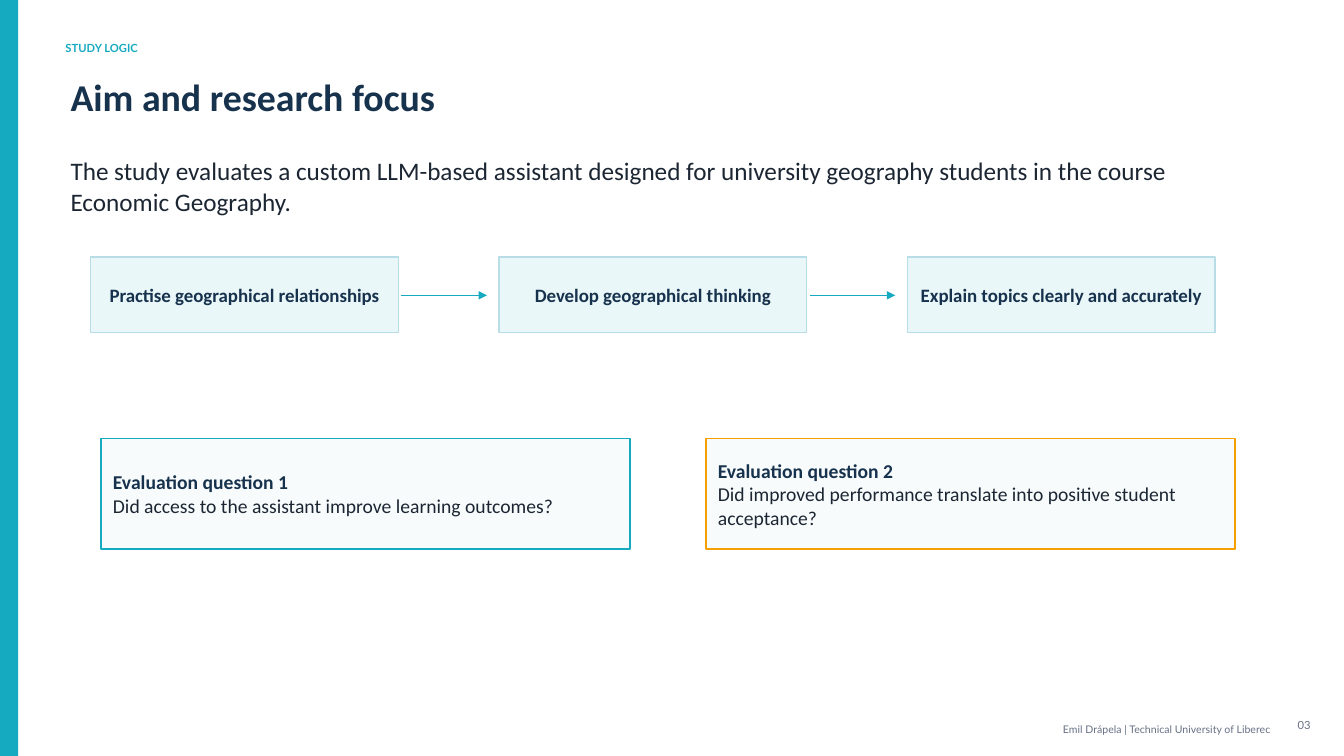
import pptx
import pptx.util
import pptx.dml.color
import pptx.enum.shapes
import pptx.enum.text
import pptx.oxml.ns
import lxml.etree

PX = 9144
HUES = {
    "teal": "15AABF", "navy": "17324D", "ink": "1C2633", "grey": "667085",
    "pale": "EAF7F9", "edge": "B9DDE6", "mist": "F7FBFC", "amber": "F59F00",
    "white": "FFFFFF",
}
ALIGN = pptx.enum.text.PP_ALIGN
STEPS = [
    "Practise geographical relationships",
    "Develop geographical thinking",
    "Explain topics clearly and accurately",
]
ASKS = [
    ("Evaluation question 1",
     "Did access to the assistant improve learning outcomes?", "teal"),
    ("Evaluation question 2",
     "Did improved performance translate into positive student acceptance?", "amber"),
]


def emu(*sizes):
    """Turn px lengths into EMU."""
    return [pptx.util.Emu(size * PX) for size in sizes]


def hue(name):
    """Look up a colour by name."""
    return pptx.dml.color.RGBColor.from_string(HUES[name])


def write(shape, lines, align=ALIGN.LEFT, inset=0):
    """Fill a shape with lines of (text, size, colour, bold, font)."""
    frame = shape.text_frame
    frame.word_wrap = True
    frame.auto_size = pptx.enum.text.MSO_AUTO_SIZE.NONE
    frame.vertical_anchor = pptx.enum.text.MSO_ANCHOR.MIDDLE
    frame.margin_left = inset * PX
    frame.margin_top = frame.margin_right = frame.margin_bottom = 0
    frame.text = "\n".join(line[0] for line in lines)
    for para, (_, size, color, bold, face) in zip(frame.paragraphs, lines):
        para.alignment = align
        para.font.size = pptx.util.Pt(size)
        para.font.bold = bold
        para.font.name = face
        para.font.color.rgb = hue(color)


def label(slide, box, line, align=ALIGN.LEFT):
    """Add a text box with one line of text."""
    write(slide.shapes.add_textbox(*emu(*box)), [line], align)


def panel(slide, box, fill, edge=None, width=1):
    """Add a flat rectangle, outlined if an edge colour is given."""
    kind = pptx.enum.shapes.MSO_SHAPE.RECTANGLE
    shape = slide.shapes.add_shape(kind, *emu(*box))
    shape.shadow.inherit = False
    shape.fill.solid()
    shape.fill.fore_color.rgb = hue(fill)
    if edge:
        shape.line.color.rgb = hue(edge)
        shape.line.width = pptx.util.Pt(width)
    else:
        shape.line.fill.background()
    return shape


def arrow(slide, left, right, y):
    """Draw a level arrow pointing right."""
    kind = pptx.enum.shapes.MSO_CONNECTOR.STRAIGHT
    line = slide.shapes.add_connector(kind, *emu(left, y, right, y))
    line.line.color.rgb = hue("teal")
    line.line.width = pptx.util.Pt(1.2)
    qn = pptx.oxml.ns.qn
    lxml.etree.SubElement(line.line._get_or_add_ln(), qn("a:tailEnd"), type="triangle")
    lxml.etree.SubElement(line._element.spPr, qn("a:effectLst"))


def header(slide, box):
    """Place the section label, the title and the lead text."""
    x, y, w, h = box
    label(slide, (x - 5, y, 280, 25), ("STUDY LOGIC", 8, "teal", True, "Lato"))
    title = slide.shapes.title
    title.left, title.top, title.width, title.height = emu(x, y + 33, 865, 55)
    write(title, [("Aim and research focus", 27, "navy", True, "Calibri")])
    lead = ("The study evaluates a custom LLM-based assistant designed for "
            "university geography students in the course Economic Geography.")
    label(slide, (x, y + h - 85, w, 85), (lead, 18, "ink", False, "Calibri"))


def flow(slide, box):
    """Spread the steps over the box and join them with arrows."""
    x, y, w, h = box
    wide = 305
    pitch = (w - wide) // (len(STEPS) - 1)
    for i, step in enumerate(STEPS):
        left = x + i * pitch
        card = panel(slide, (left, y, wide, h), "pale", "edge")
        write(card, [(step, 13.5, "navy", True, "Calibri")], ALIGN.CENTER)
        if i:
            arrow(slide, left - pitch + wide + 3, left - 12, y + (h + 1) // 2)


def asks(slide, box):
    """Set the evaluation questions side by side in the box."""
    x, y, w, h = box
    gap = 75
    wide = (w - gap) // len(ASKS)
    for i, (head, body, edge) in enumerate(ASKS):
        card = panel(slide, (x + i * (wide + gap), y, wide, h), "mist", edge, 1.2)
        write(card, [(head, 14, "navy", True, "Calibri"),
                     (body, 14, "ink", False, "Calibri")], inset=12)


def footer(slide, box):
    """Place the credit and the page number, both set right."""
    x, y, w, h = box
    credit = "Emil Drápela | Technical University of Liberec"
    label(slide, (x, y + 4, 385, h), (credit, 7.5, "grey", False, "Lato"), ALIGN.RIGHT)
    label(slide, (x + w - 35, y, 35, h), ("03", 8, "grey", False, "Lato"), ALIGN.RIGHT)


def main():
    """Build the slide and save it."""
    deck = pptx.Presentation()
    deck.slide_width, deck.slide_height = emu(1333, 750)
    slide = deck.slides.add_slide(deck.slide_layouts.get_by_name("Title Only"))
    slide.background.fill.solid()
    slide.background.fill.fore_color.rgb = hue("white")
    panel(slide, (0, 0, 18, 750), "teal")
    header(slide, (70, 35, 1190, 192))
    flow(slide, (90, 255, 1115, 75))
    asks(slide, (100, 435, 1125, 110))
    footer(slide, (875, 708, 425, 22))
    deck.save("out.pptx")


if __name__ == "__main__":
    main()
